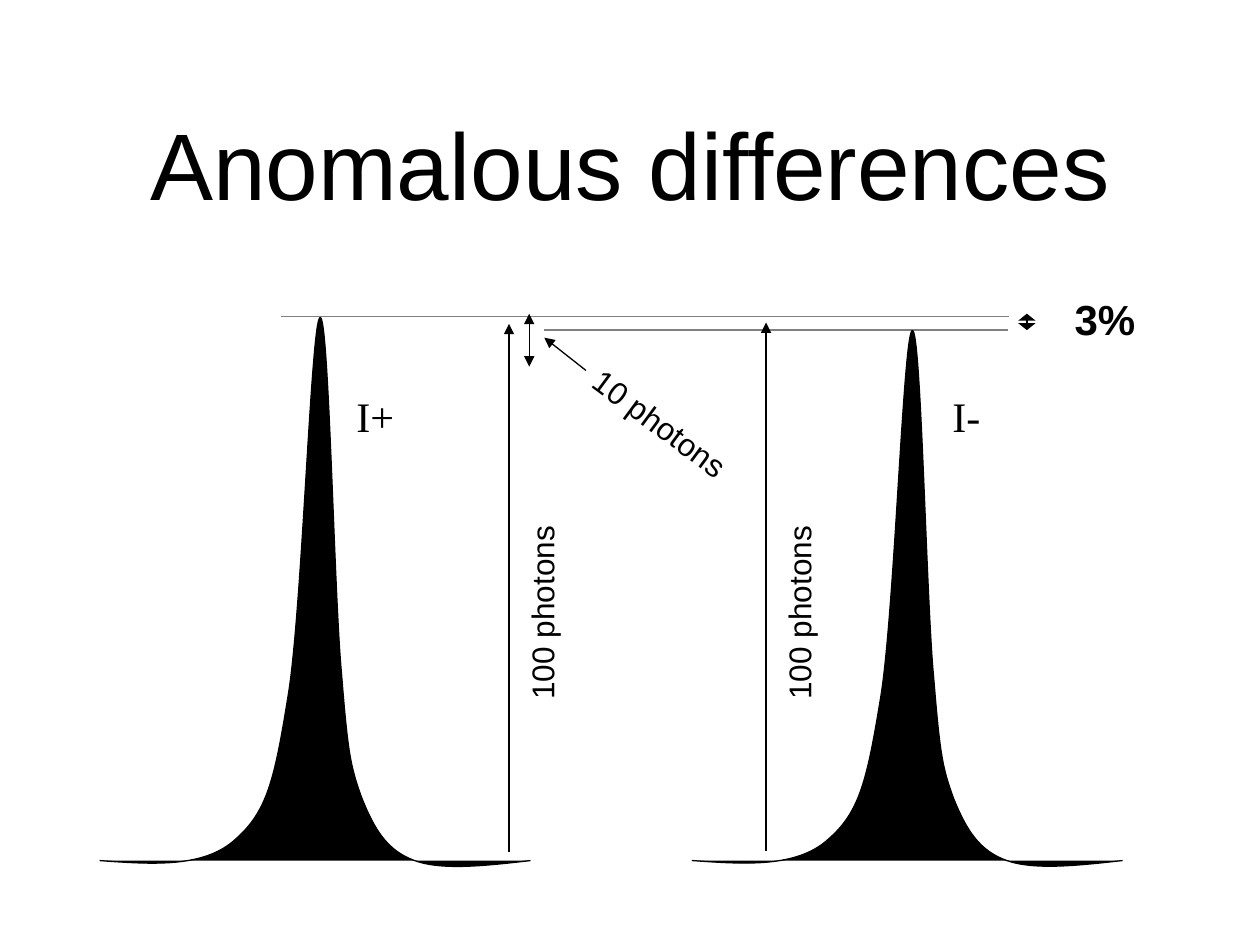
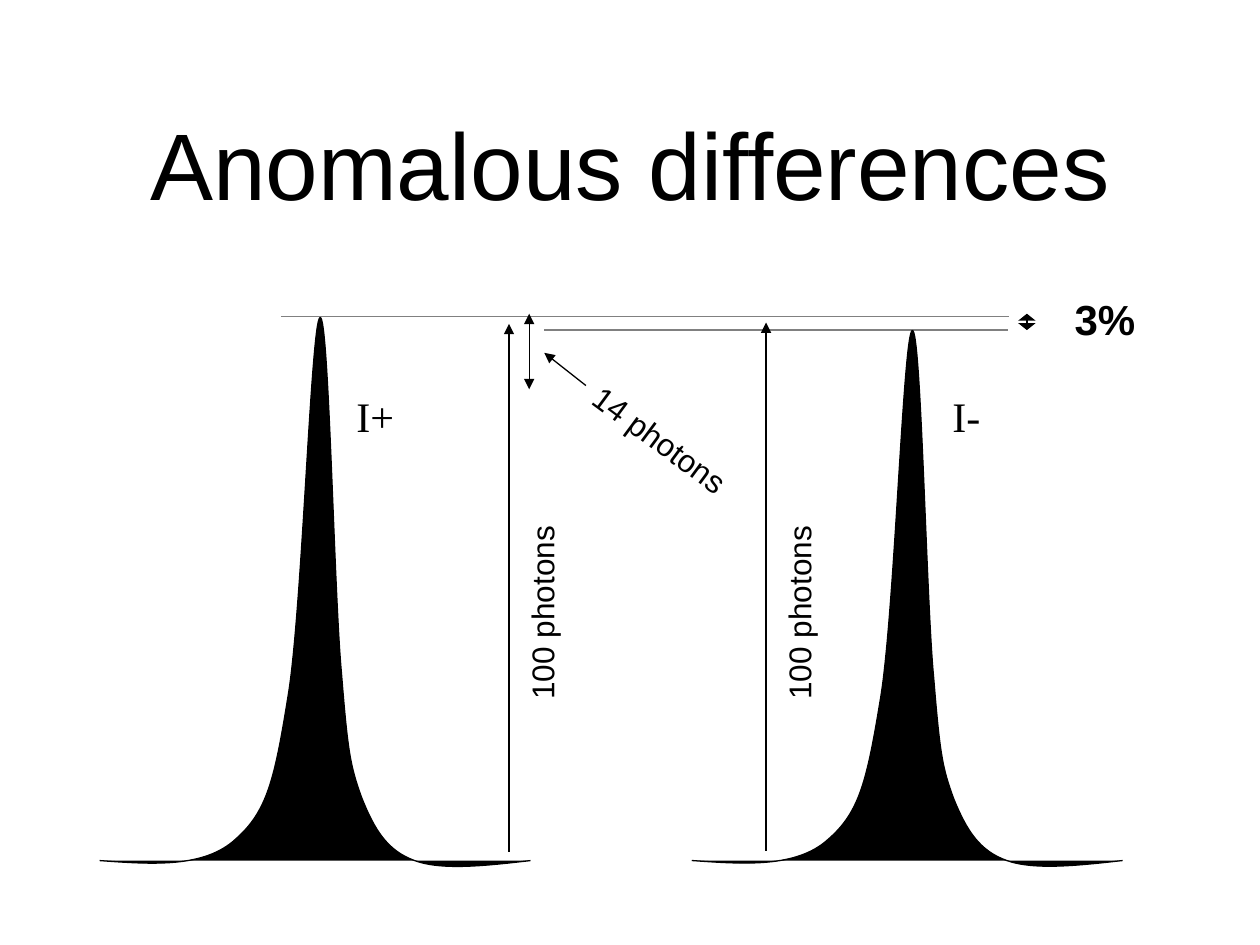
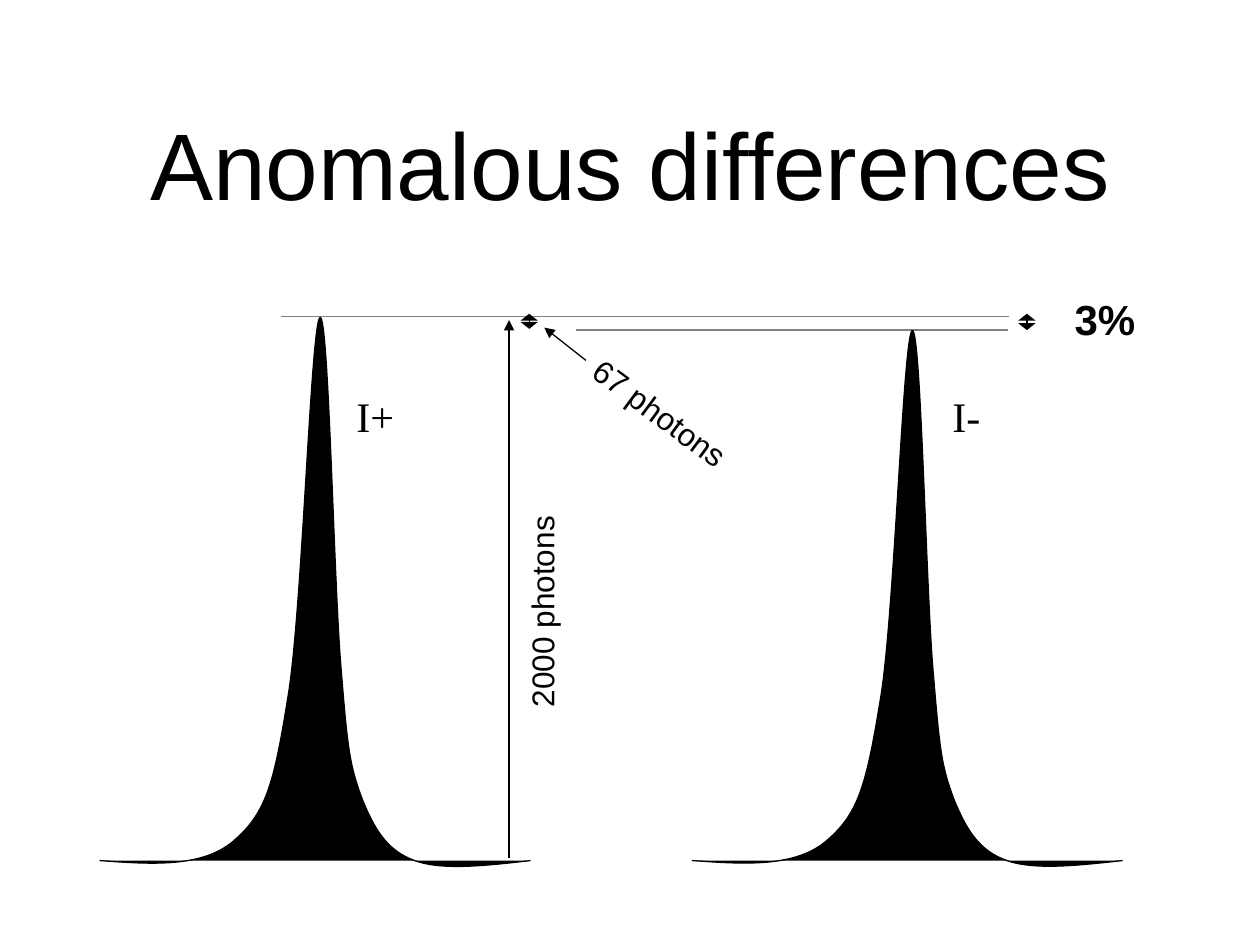
from pptx import Presentation
from pptx.dml.color import RGBColor as RGB
from pptx.enum.shapes import MSO_CONNECTOR as CONN
from pptx.enum.text import MSO_ANCHOR as ANCHOR, MSO_AUTO_SIZE as AUTO, PP_ALIGN as ALIGN
from pptx.oxml.ns import qn
from pptx.util import Inches, Pt
from lxml.etree import SubElement

COLORS = {"ink": "000000", "guide": "808080"}
SANS, SERIF = "Arial", "Times New Roman"

# Peak outline: a start point, then Bezier segments of two controls and an end
BASE_Y = 6.83
PEAK_POINTS = [
    (0.79, BASE_Y),
    (1.21, 6.86), (1.62, 6.89), (1.87, 6.66),
    (2.12, 6.44), (2.18, 6.19), (2.29, 5.5),
    (2.4, 4.81), (2.47, 2.54), (2.54, 2.52),
    (2.61, 2.49), (2.65, 4.7), (2.71, 5.34),
    (2.76, 5.97), (2.78, 6.08), (2.87, 6.33),
    (2.97, 6.58), (3.07, 6.75), (3.29, BASE_Y),
    (3.51, 6.91), (3.86, 6.87), (4.21, BASE_Y),
]

# Horizontal shift and height factor of the I+ and I- peaks
PEAKS = [(0, 1), (4.7, 0.976)]

# Labels on every slide: text, left, top, width, font, bold
LABELS = [
    ("I-", 7.46, 3.05, 0.42, SERIF, False),
    ("I+", 2.73, 3.05, 0.5, SERIF, False),
    ("3%", 8.43, 2.28, 0.68, SANS, True),
]

# Height arrows: x, bottom, top; then the label's text, left, top, width
LEFT_100 = (4.04, 6.76, 2.57, "100 photons", 3.51, 4.66, 1.58)
RIGHT_100 = (6.08, 6.75, 2.56, "100 photons", 5.55, 4.66, 1.58)
LEFT_2000 = (4.04, 6.81, 2.54, "2000 photons", 3.44, 4.65, 1.72)

# Per slide: noise text, end of its range, label top, pointer tip,
# left end of the lower guide, height arrows
SLIDES = [
    ("10 photons", 2.91, 3.16, 2.68, 4.32, [LEFT_100, RIGHT_100]),
    ("14 photons", 3.09, 3.29, 2.8, 4.32, [LEFT_100, RIGHT_100]),
    ("67 photons", 2.61, 3.08, 2.6, 4.57, [LEFT_2000]),
]


def add_line(s, x1, y1, x2, y2, color="ink", ends=()):
    sp = s.shapes.add_connector(
        CONN.STRAIGHT, Inches(x1), Inches(y1), Inches(x2), Inches(y2))
    sp.line.color.rgb = RGB.from_string(COLORS[color])
    sp.line.width = Pt(0.75)
    ln = sp.line._get_or_add_ln()
    # Very short arrows get wide, flat heads
    short = abs(y2 - y1) < 0.2
    w, length = ("lg", "sm") if short else ("med", "med")
    for end in ends:
        SubElement(ln, qn(f"a:{end}"), type="triangle", w=w, len=length)
    SubElement(sp._element.spPr, qn("a:effectLst"))


def add_label(s, text, x, y, w, h, size, font=SANS, bold=False, rotation=0):
    sp = s.shapes.add_textbox(Inches(x), Inches(y), Inches(w), Inches(h))
    sp.rotation = rotation
    tf = sp.text_frame
    tf.word_wrap = False
    tf.auto_size = AUTO.SHAPE_TO_FIT_TEXT
    r = tf.paragraphs[0].add_run()
    r.text = text
    r.font.name, r.font.size, r.font.bold = font, Pt(size), bold
    r.font.color.rgb = RGB.from_string(COLORS["ink"])


prs = Presentation()
prs.slide_width, prs.slide_height = Inches(10), Inches(7.5)

for noise, range_end, noise_top, tip_y, guide_x, heights in SLIDES:
    s = prs.slides.add_slide(prs.slide_layouts[5])

    # Guides at the two peak tops
    add_line(s, 2.23, 2.51, 8.01, 2.51, "guide")
    add_line(s, guide_x, 2.62, 8, 2.62, "guide")

    # Title, in front of the guides
    title = s.shapes.title
    s.shapes._spTree.append(title._element)
    title.left, title.top = Inches(0.75), Inches(0.67)
    title.width, title.height = Inches(8.5), Inches(1.25)
    tf = title.text_frame
    tf.auto_size = AUTO.NONE
    tf.vertical_anchor = ANCHOR.MIDDLE
    p = tf.paragraphs[0]
    p.alignment = ALIGN.CENTER
    r = p.add_run()
    r.text = "Anomalous differences"
    r.font.name, r.font.size = SANS, Pt(54)
    r.font.color.rgb = RGB.from_string(COLORS["ink"])

    # Peaks: every three line segments become one Bezier segment
    for shift, factor in PEAKS:
        points = [(Inches(x + shift), Inches(BASE_Y + (y - BASE_Y) * factor))
                  for x, y in PEAK_POINTS]
        outline = s.shapes.build_freeform(*points[0])
        outline.add_line_segments(points[1:], close=False)
        peak = outline.convert_to_shape()
        segments = list(peak._element.iter(qn("a:lnTo")))
        curve_path = segments[0].getparent()
        for i in range(0, len(segments), 3):
            curve = SubElement(curve_path, qn("a:cubicBezTo"))
            for segment in segments[i:i + 3]:
                curve.append(segment[0])
                curve_path.remove(segment)
        peak.shadow.inherit = False
        peak.fill.solid()
        peak.fill.fore_color.rgb = RGB.from_string(COLORS["ink"])
        peak.line.color.rgb = RGB.from_string(COLORS["ink"])
        peak.line.width = Pt(0.75)

    # Peak names and the relative difference
    for text, x, y, w, font, bold in LABELS:
        add_label(s, text, x, y, w, 0.5, 24, font, bold)
    add_line(s, 8.15, 2.49, 8.15, 2.62, ends=("headEnd", "tailEnd"))

    # Peak heights in photons
    for x, bottom, top, text, label_x, label_y, label_w in heights:
        add_line(s, x, bottom, x, top, ends=("tailEnd",))
        add_label(s, text, label_x, label_y, label_w, 0.4, 18, rotation=270)

    # Noise range and its pointer
    add_line(s, 4.2, 2.49, 4.2, range_end, ends=("headEnd", "tailEnd"))
    add_label(s, noise, 4.52, noise_top, 1.44, 0.4, 18, rotation=36.58)
    add_line(s, 4.65, tip_y + 0.26, 4.32, tip_y, ends=("tailEnd",))

prs.save("out.pptx")
